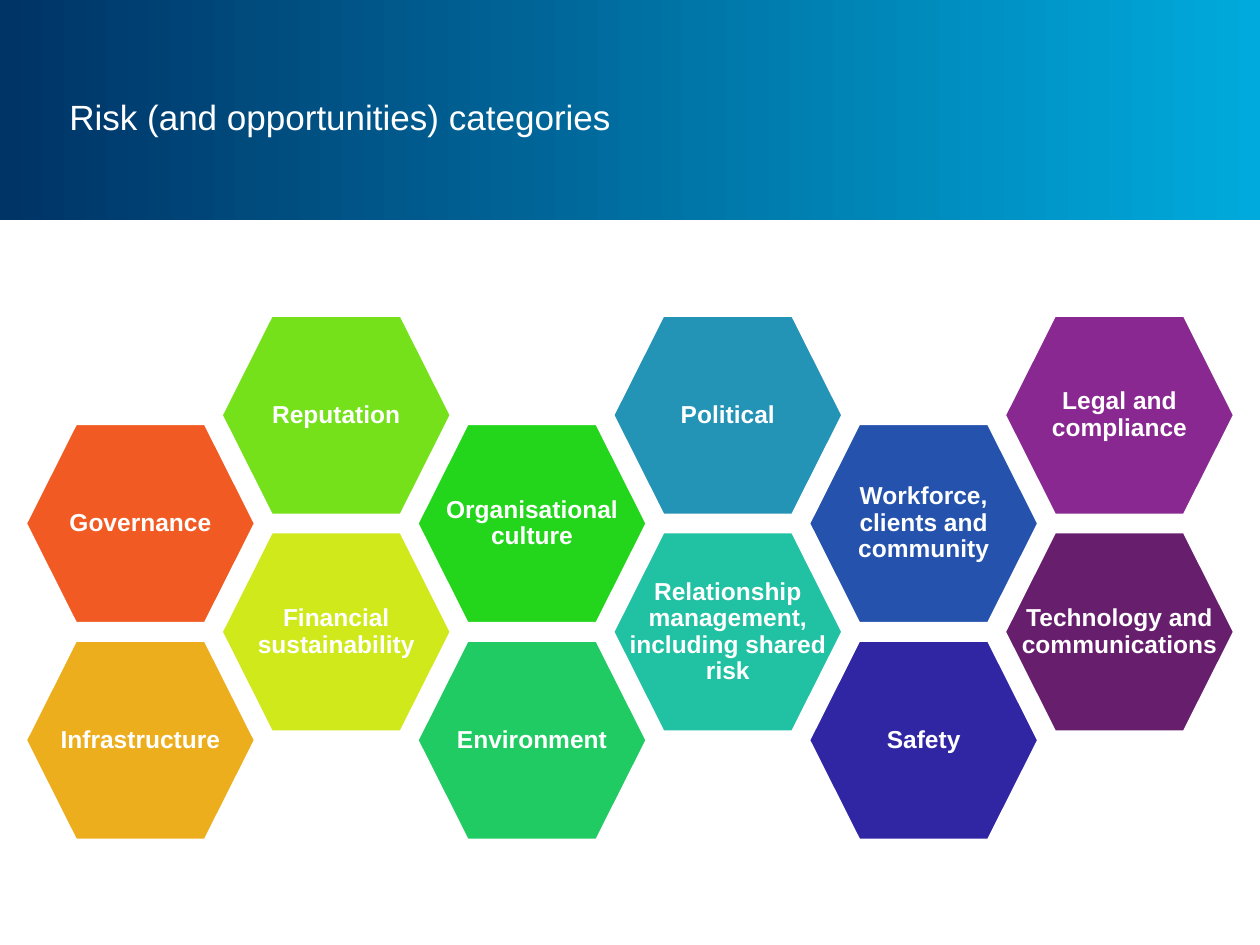
from pptx import Presentation
from pptx.dml.color import RGBColor as RGB
from pptx.enum.shapes import MSO_SHAPE as SHAPE
from pptx.enum.text import MSO_ANCHOR as ANCHOR, PP_ALIGN as ALIGN
from pptx.util import Inches, Pt

FONT = "Arial"
WHITE = RGB(0xFF, 0xFF, 0xFF)
NAVY = RGB(0x00, 0x33, 0x66)
SKY = RGB(0x00, 0xAA, 0xDC)
ORANGE = RGB(0xF1, 0x5A, 0x22)
AMBER = RGB(0xED, 0xAE, 0x1E)
LIME = RGB(0x75, 0xE1, 0x1A)
YELLOW = RGB(0xD0, 0xE9, 0x1A)
GREEN = RGB(0x23, 0xD6, 0x1C)
EMERALD = RGB(0x1F, 0xCB, 0x62)
STEEL = RGB(0x23, 0x93, 0xB6)
TEAL = RGB(0x21, 0xC1, 0xA3)
BLUE = RGB(0x24, 0x52, 0xAC)
INDIGO = RGB(0x30, 0x26, 0xA3)
PURPLE = RGB(0x89, 0x28, 0x90)
PLUM = RGB(0x67, 0x1E, 0x6C)

CATEGORIES = [
    [("Governance", ORANGE), ("Infrastructure", AMBER)],
    [("Reputation", LIME), ("Financial sustainability", YELLOW)],
    [("Organisational culture", GREEN), ("Environment", EMERALD)],
    [("Political", STEEL),
     ("Relationship management, including shared risk", TEAL)],
    [("Workforce, clients and community", BLUE), ("Safety", INDIGO)],
    [("Legal and compliance", PURPLE),
     ("Technology and communications", PLUM)],
]
HEX_W, HEX_H, HEX_CUT = 1.83, 1.59, 0.4


def add_text(tf, text, size, align, bold=False):
    """Write one white run into a vertically centred frame."""
    tf.word_wrap = True
    tf.vertical_anchor = ANCHOR.MIDDLE
    p = tf.paragraphs[0]
    p.alignment = align
    r = p.add_run()
    r.text = text
    r.font.name = FONT
    r.font.size = Pt(size)
    r.font.bold = bold
    r.font.color.rgb = WHITE
    return p


def add_header(slide, x, y, w, h):
    """Draw the gradient band and set the title over it."""
    band = slide.shapes.add_shape(
        SHAPE.RECTANGLE, Inches(x), Inches(y), Inches(w), Inches(h))
    band.shadow.inherit = False
    band.line.fill.background()
    band.fill.gradient()
    band.fill.gradient_angle = 0
    for stop, color in zip(band.fill.gradient_stops, (NAVY, SKY)):
        stop.color.rgb = color

    title = slide.shapes.title
    title._element.addprevious(band._element)
    title.left, title.top = Inches(x + 0.51), Inches(y + 0.3)
    title.width, title.height = Inches(7.48), Inches(1.25)
    tf = title.text_frame
    tf.margin_left = tf.margin_right = Inches(0.04)
    tf.margin_top = tf.margin_bottom = Inches(0.04)
    add_text(tf, "Risk (and opportunities) categories", 20, ALIGN.LEFT)


def add_hexagon(slide, x, y, text, color):
    """Draw one labelled hexagon with its top left corner at x, y."""
    mid, right, bottom = y + HEX_H / 2, x + HEX_W, y + HEX_H
    points = [(x + HEX_CUT, y), (right - HEX_CUT, y), (right, mid),
              (right - HEX_CUT, bottom), (x + HEX_CUT, bottom)]
    builder = slide.shapes.build_freeform(Inches(x), Inches(mid))
    builder.add_line_segments([(Inches(a), Inches(b)) for a, b in points])
    sp = builder.convert_to_shape()
    sp.shadow.inherit = False
    sp.fill.solid()
    sp.fill.fore_color.rgb = color
    sp.line.color.rgb = WHITE
    sp.line.width = Pt(2)
    tf = sp.text_frame
    tf.margin_left = tf.margin_right = Inches(0.12)
    tf.margin_top = tf.margin_bottom = Inches(0.12)
    p = add_text(tf, text, 14, ALIGN.CENTER, bold=True)
    p.line_spacing = 0.9


def add_honeycomb(slide, x, y, w, h):
    """Fill the box with columns of hexagons, even ones half a step lower."""
    col_step = (w - HEX_W) / (len(CATEGORIES) - 1)
    row_step = (h - HEX_H) / 1.5
    for col, cells in enumerate(CATEGORIES):
        drop = row_step / 2 if col % 2 == 0 else 0
        for row, (text, color) in enumerate(cells):
            add_hexagon(slide, x + col * col_step,
                        y + drop + row * row_step, text, color)


def main():
    """Build and save the slide."""
    prs = Presentation()
    prs.slide_width, prs.slide_height = Inches(10), Inches(7.5)
    slide = prs.slides.add_slide(prs.slide_layouts[5])
    add_header(slide, 0, 0, 10, 1.75)
    add_honeycomb(slide, 0.2, 2.5, 9.6, 4.17)
    prs.save("out.pptx")


if __name__ == "__main__":
    main()
